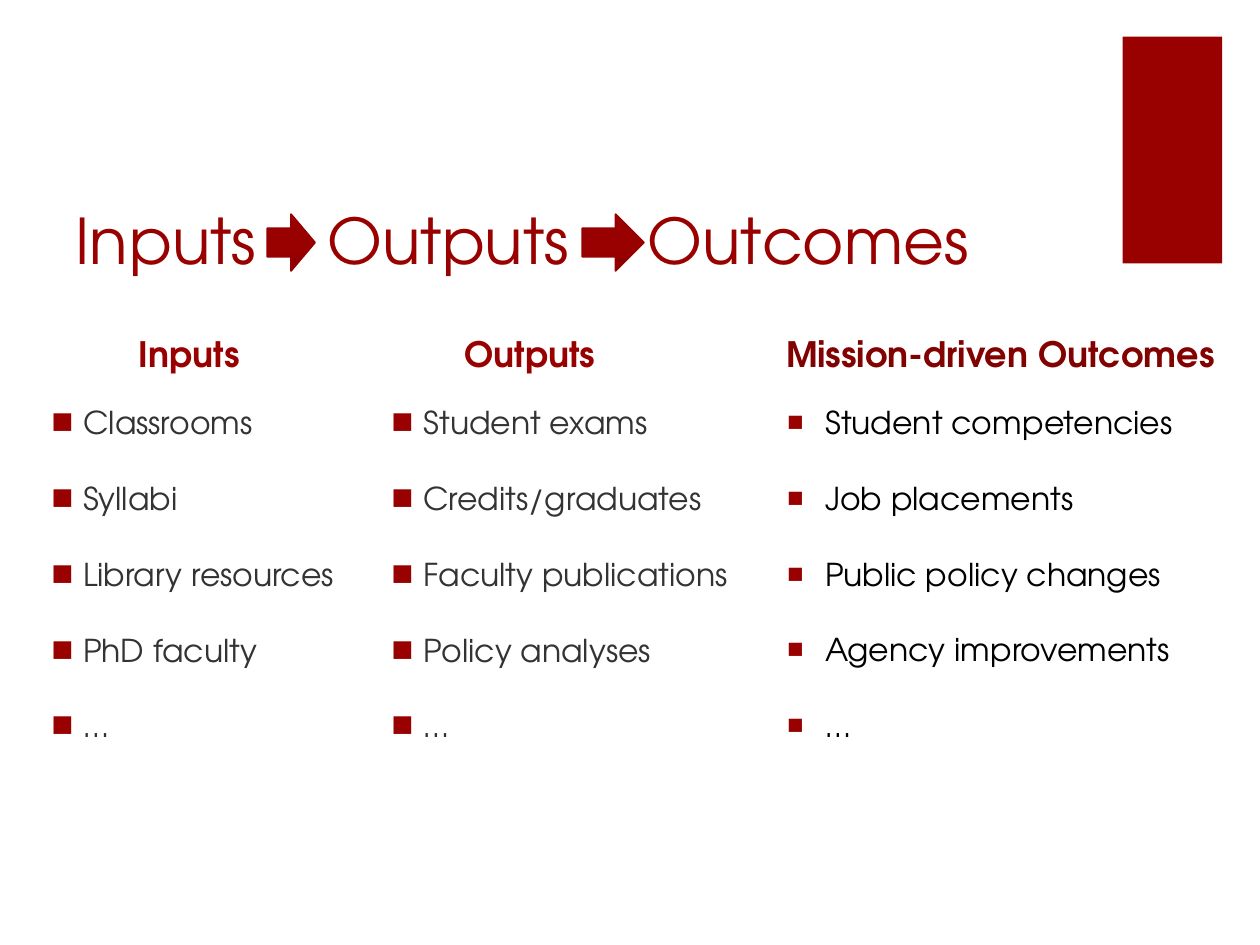
from lxml.etree import SubElement
from pptx import Presentation
from pptx.dml.color import RGBColor
from pptx.enum.shapes import MSO_SHAPE
from pptx.enum.text import MSO_ANCHOR, MSO_AUTO_SIZE, PP_ALIGN
from pptx.oxml.ns import qn
from pptx.util import Inches, Pt

RED = RGBColor(0x99, 0x00, 0x00)
DARK = RGBColor(0x83, 0x00, 0x00)
EDGE = RGBColor(0x96, 0x00, 0x00)
MAROON = RGBColor(0x82, 0x01, 0x01)
GREY = RGBColor(0x33, 0x33, 0x33)
BLACK = RGBColor(0x00, 0x00, 0x00)

FONT = "TeX Gyre Adventor"
COMPARISON = 4
HEAD_TOP, HEAD_HIGH, LIST_TOP = 2.25, 0.77, 3.15

INPUTS = ["Classrooms", "Syllabi", "Library resources", "PhD faculty", "…"]
OUTPUTS = ["Student exams", "Credits/graduates", "Faculty publications",
           "Policy analyses", "…"]
OUTCOMES = ["Student competencies", "Job placements", "Public policy changes",
            "Agency improvements", "…"]


def write(frame, lines, size=18, color=RED, bold=False, align=PP_ALIGN.LEFT,
          anchor=MSO_ANCHOR.TOP, after=0):
    """Fill a text frame, one paragraph a line, and return the paragraphs."""
    frame.word_wrap = True
    frame.auto_size = MSO_AUTO_SIZE.NONE
    frame.vertical_anchor = anchor
    for n, line in enumerate(lines):
        para = frame.paragraphs[0] if n == 0 else frame.add_paragraph()
        para.alignment = align
        para.space_before = Pt(0)
        para.space_after = Pt(after)
        run = para.add_run()
        run.text = line
        font = run.font
        font.name, font.size, font.bold = FONT, Pt(size), bold
        font.color.rgb = color
    return frame.paragraphs


def bullet(para, mark, indent, scale):
    props = para._p.get_or_add_pPr()
    props.set("marL", str(Inches(indent)))
    props.set("indent", str(-Inches(indent)))
    tint = SubElement(props, qn("a:buClr"))
    SubElement(tint, qn("a:srgbClr"), val=str(RED))
    SubElement(props, qn("a:buSzPct"), val=str(scale * 1000))
    SubElement(props, qn("a:buFont"), typeface=FONT)
    SubElement(props, qn("a:buChar"), char=mark)


def tabs(para, stops):
    group = SubElement(para._p.get_or_add_pPr(), qn("a:tabLst"))
    for stop in stops:
        SubElement(group, qn("a:tab"), pos=str(Inches(stop)), algn="l")


class Deck:
    def __init__(self):
        self.file = Presentation()
        self.file.slide_width = Inches(10)
        self.file.slide_height = Inches(7.5)
        self.slide = self.file.slides.add_slide(
            self.file.slide_layouts[COMPARISON])

    def frame(self, box, slot=None):
        """Give the text frame of a placed placeholder or a new text box."""
        place = [Inches(v) for v in box]
        if slot is None:
            return self.slide.shapes.add_textbox(*place).text_frame
        shape = self.slide.placeholders[slot]
        shape.left, shape.top, shape.width, shape.height = place
        return shape.text_frame

    def title(self, text, box, stops):
        paras = write(self.frame(box, 0), [text], size=36,
                      anchor=MSO_ANCHOR.BOTTOM)
        tabs(paras[0], stops)

    def head(self, text, left, width, slot=None, color=RED):
        box = (left, HEAD_TOP, width, HEAD_HIGH)
        write(self.frame(box, slot), [text], size=20, color=color, bold=True,
              align=PP_ALIGN.CENTER, anchor=MSO_ANCHOR.BOTTOM)

    def list(self, items, left, width, high, slot=None, color=GREY,
             mark="■", indent=0.25, scale=100):
        box = (left, LIST_TOP, width, high)
        for para in write(self.frame(box, slot), items, color=color,
                          after=21.7):
            bullet(para, mark, indent, scale)

    def shape(self, kind, box):
        shape = self.slide.shapes.add_shape(kind, *[Inches(v) for v in box])
        shape.shadow.inherit = False
        return shape

    def block(self, box):
        shape = self.shape(MSO_SHAPE.RECTANGLE, box)
        shape.fill.solid()
        shape.fill.fore_color.rgb = RED
        shape.line.fill.background()

    def arrow(self, left, width):
        shape = self.shape(MSO_SHAPE.RIGHT_ARROW, (left, 1.7, width, 0.45))
        shape.fill.gradient()
        shape.fill.gradient_angle = 90
        for stop, color, place in zip(shape.fill.gradient_stops,
                                      (DARK, RED), (0, 0.35)):
            stop.color.rgb = color
            stop.position = place
        shape.line.color.rgb = EDGE
        shape.line.width = Pt(1)


def main():
    deck = Deck()
    deck.block((8.91, 0.29, 0.79, 1.8))
    deck.title("Inputs\tOutputs\tOutcomes", (0.5, 1, 8.34, 1.25), (2, 4.54))
    deck.head("Inputs", 0.5, 2, slot=1)
    deck.list(INPUTS, 0.31, 2.7, 3.55, slot=2)
    deck.head("Outputs", 3.1, 2.21, slot=3)
    deck.list(OUTPUTS, 3.01, 2.99, 3.55, slot=4)
    deck.head("Mission-driven Outcomes", 6, 3.88, color=MAROON)
    deck.list(OUTCOMES, 6.14, 3.5, 3.13, color=BLACK, mark="▪",
              indent=0.31, scale=110)
    deck.arrow(2.12, 0.38)
    deck.arrow(4.62, 0.49)
    deck.file.save("out.pptx")


if __name__ == "__main__":
    main()
